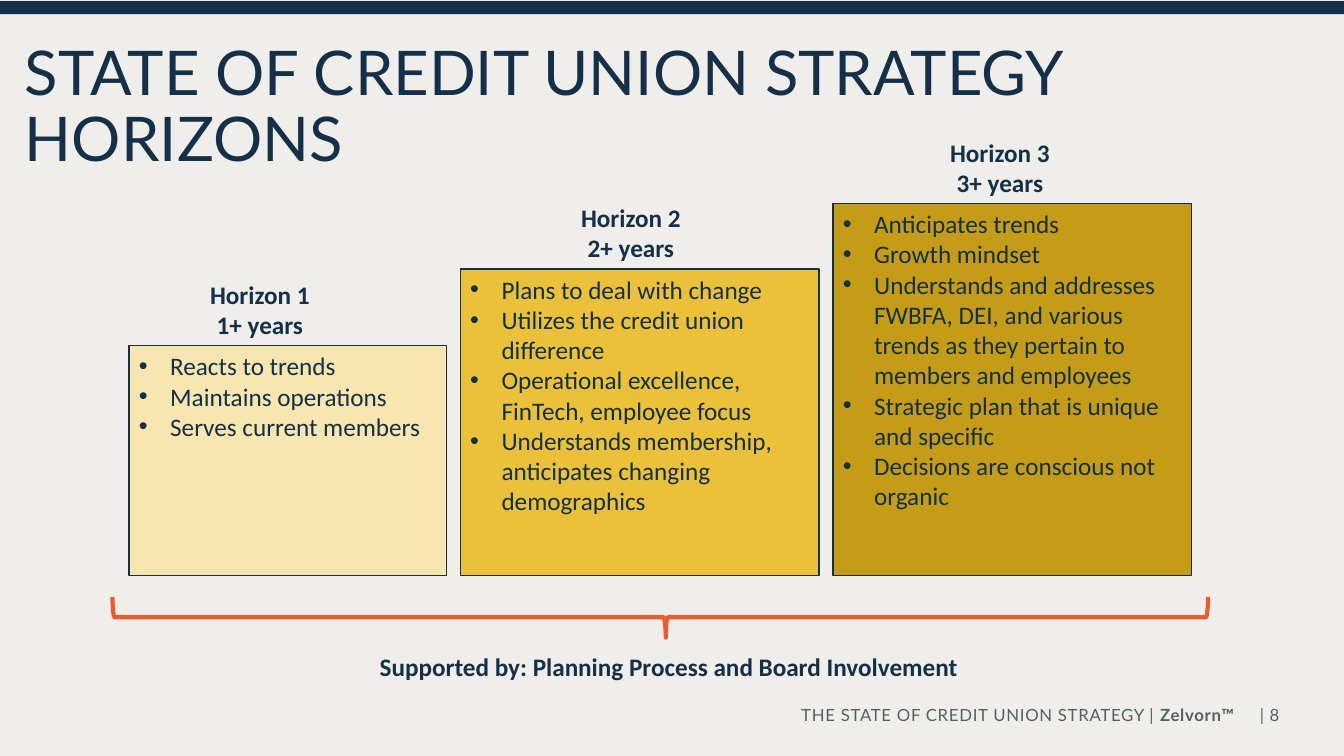
from lxml import etree
from pptx import Presentation, util as u
from pptx.dml.color import RGBColor
from pptx.enum import shapes, text
from pptx.oxml import ns

NAVY, GREY, ORANGE = "143048", "536161", "F15928"
BOX_LEFT, BOX_BOTTOM, BOX_GAP = 3.25, 14.5, 0.35
LABEL_WIDTH, LABEL_HEIGHT = 3.05, 1.8

HORIZONS = [
    ("Horizon 1\v1+ years", 6.55, 8.71, 8, "F7E6AF", [
        "Reacts to trends",
        "Maintains operations",
        "Serves current members"]),
    ("Horizon 2\v2+ years", 15.9, 6.78, 9.04, "EAC138", [
        "Plans to deal with change",
        "Utilizes the credit union difference",
        "Operational excellence, FinTech, employee focus",
        "Understands membership, anticipates changing demographics"]),
    ("Horizon 3\v3+ years", 25.2, 5.13, 9.04, "C59C15", [
        "Anticipates trends",
        "Growth mindset",
        "Understands and addresses FWBFA, DEI, and various trends as they "
        "pertain to members and employees",
        "Strategic plan that is unique and specific",
        "Decisions are conscious not organic"]),
]


def color(value):
    """Turn a hex string into a colour."""
    return RGBColor.from_string(value)


def write(shape, lines, font="Calibri", size=18, fill=NAVY, bold=False, align="LEFT",
          wrap=True, line_spacing=None, tracking=0, bullets=False):
    """Fill a shape with formatted paragraphs."""
    frame = shape.text_frame
    frame.word_wrap = wrap
    frame.vertical_anchor = text.MSO_ANCHOR.TOP
    for index, line in enumerate(lines):
        paragraph = frame.paragraphs[0] if index == 0 else frame.add_paragraph()
        paragraph.text = line
        paragraph.alignment = getattr(text.PP_ALIGN, align)
        if line_spacing:
            paragraph.line_spacing = line_spacing
        if bullets:
            properties = paragraph._p.get_or_add_pPr()
            properties.set("marL", str(u.Cm(0.79)))
            properties.set("indent", str(u.Cm(-0.79)))
            etree.SubElement(properties, ns.qn("a:buFont"), typeface="Arial")
            etree.SubElement(properties, ns.qn("a:buChar"), char="•")
        for run in paragraph.runs:
            run.font.name, run.font.size, run.font.bold = font, u.Pt(size), bold
            run.font.color.rgb = color(fill)
            if tracking:
                run._r.get_or_add_rPr().set("spc", str(int(tracking * 100)))


class SlideBuilder:
    """Hold the slide and draw its elements in one style."""

    def __init__(self, slide):
        """Keep the slide and paint its background."""
        self.slide = slide
        slide.background.fill.solid()
        slide.background.fill.fore_color.rgb = color("EFEEEB")

    def text_box(self, place, line, **style):
        """Add a text box at left, top, width, height."""
        write(self.slide.shapes.add_textbox(*map(u.Cm, place)), [line], **style)

    def shape(self, kind, place, fill=None, line=None, width=1):
        """Add a preset shape and return it."""
        shape = self.slide.shapes.add_shape(kind, *map(u.Cm, place))
        shape.shadow.inherit = False
        if fill:
            shape.fill.solid()
            shape.fill.fore_color.rgb = color(fill)
        else:
            shape.fill.background()
        if line:
            shape.line.color.rgb = color(line)
            shape.line.width = u.Pt(width)
        else:
            shape.line.fill.background()
        return shape

    def rectangle(self, place, fill, line=None):
        """Add a filled rectangle."""
        return self.shape(shapes.MSO_SHAPE.RECTANGLE, place, fill, line)

    def brace(self, place):
        """Add a brace that points down."""
        brace = self.shape(shapes.MSO_SHAPE.LEFT_BRACE, place, line=ORANGE, width=3)
        brace.rotation = 270
        brace.adjustments[0], brace.adjustments[1] = 0.056, 0.505

    def footer(self, left, width, line, **style):
        """Add one part of the footer."""
        self.text_box((left, 17.7, width, 0.84), line, font="Lato", size=12, fill=GREY,
                      line_spacing=0.9, tracking=0.5, **style)


def main():
    """Build and save the slide."""
    presentation = Presentation()
    presentation.slide_width, presentation.slide_height = u.Cm(33.87), u.Cm(19.05)
    builder = SlideBuilder(presentation.slides.add_slide(presentation.slide_layouts[6]))

    builder.footer(28.75, 2.84, "Zelvorn™", bold=True, align="CENTER")
    builder.footer(9.65, 19.69, "THE STATE OF CREDIT UNION STRATEGY |", align="RIGHT")
    builder.footer(31.5, 2.11, "| 8")
    builder.rectangle((0, 0.03, 33.87, 0.33), NAVY)
    builder.text_box((0.38, 0.94, 32.05, 1.9), "STATE OF CREDIT UNION STRATEGY HORIZONS",
                     font="Lato", size=44, line_spacing=0.9)

    left = BOX_LEFT
    for label, center, top, width, fill, points in HORIZONS:
        box = builder.rectangle((left, top, width, BOX_BOTTOM - top), fill, NAVY)
        write(box, points, bullets=True)
        builder.text_box((center - LABEL_WIDTH / 2, top - LABEL_HEIGHT, LABEL_WIDTH, LABEL_HEIGHT),
                         label, bold=True, align="CENTER", wrap=False)
        left += width + BOX_GAP

    builder.brace((16.13, 1.75, 1.02, 27.61))
    builder.text_box((9.32, 16.28, 15.19, 1.02),
                     "Supported by: Planning Process and Board Involvement", bold=True, wrap=False)
    presentation.save("out.pptx")


if __name__ == "__main__":
    main()
